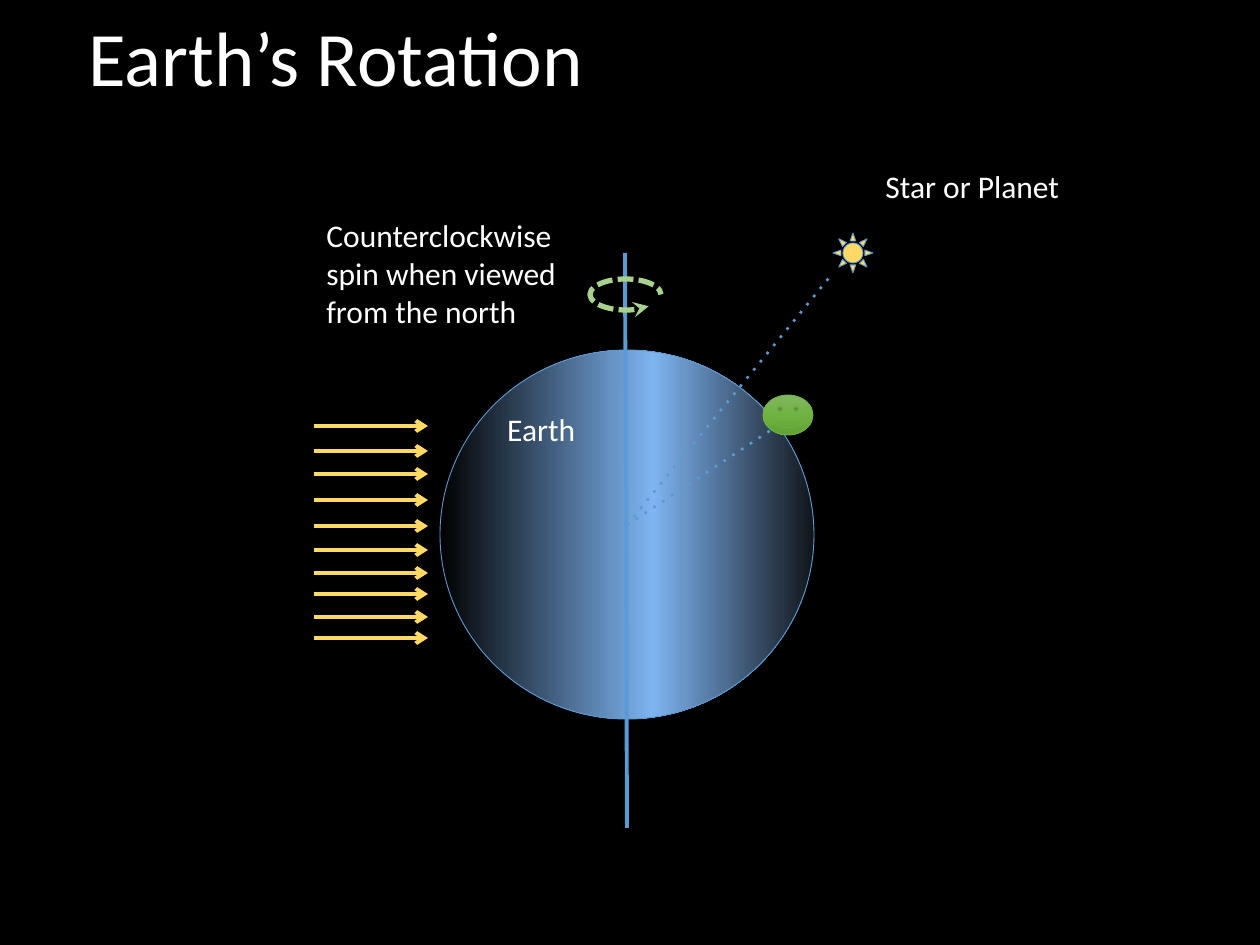
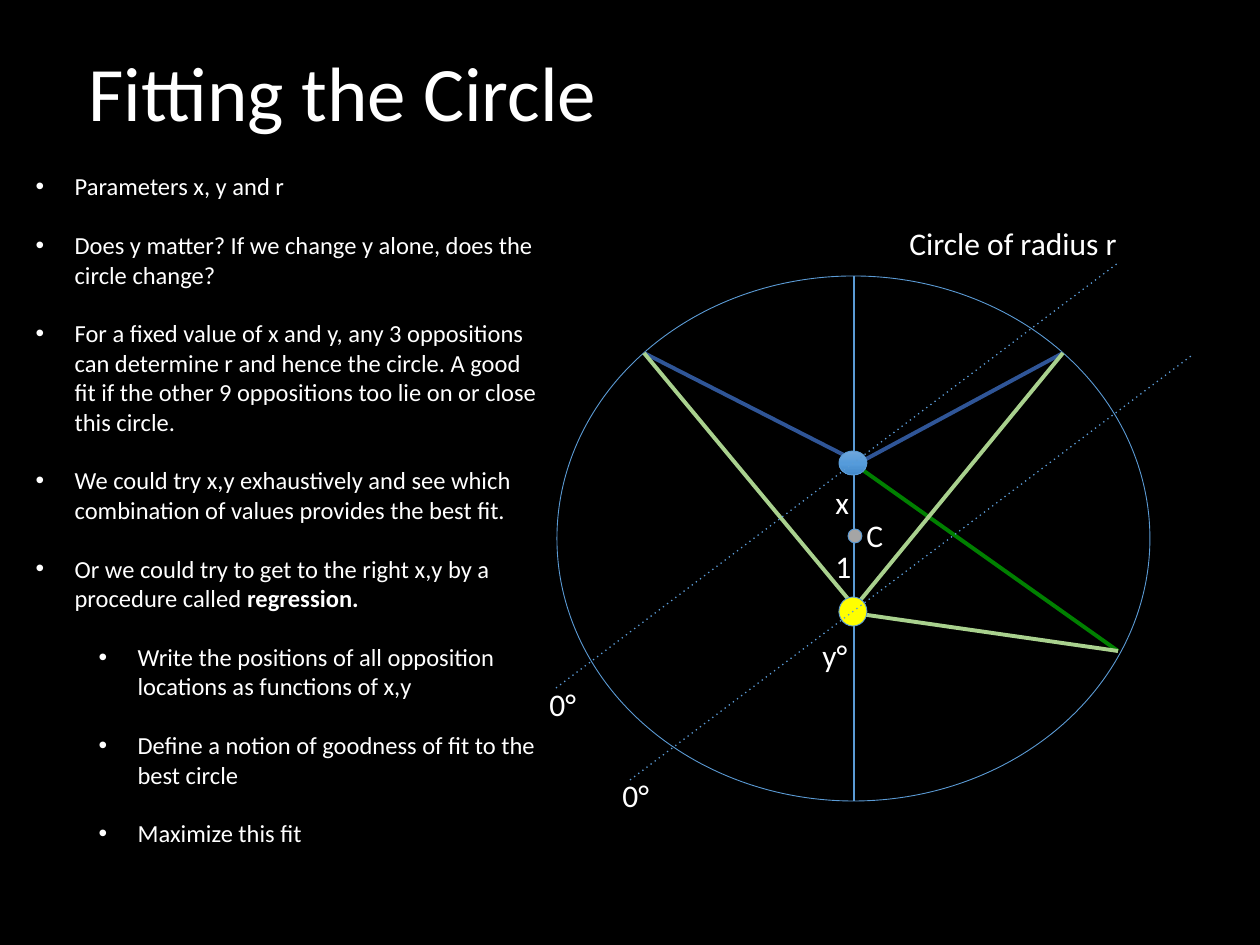
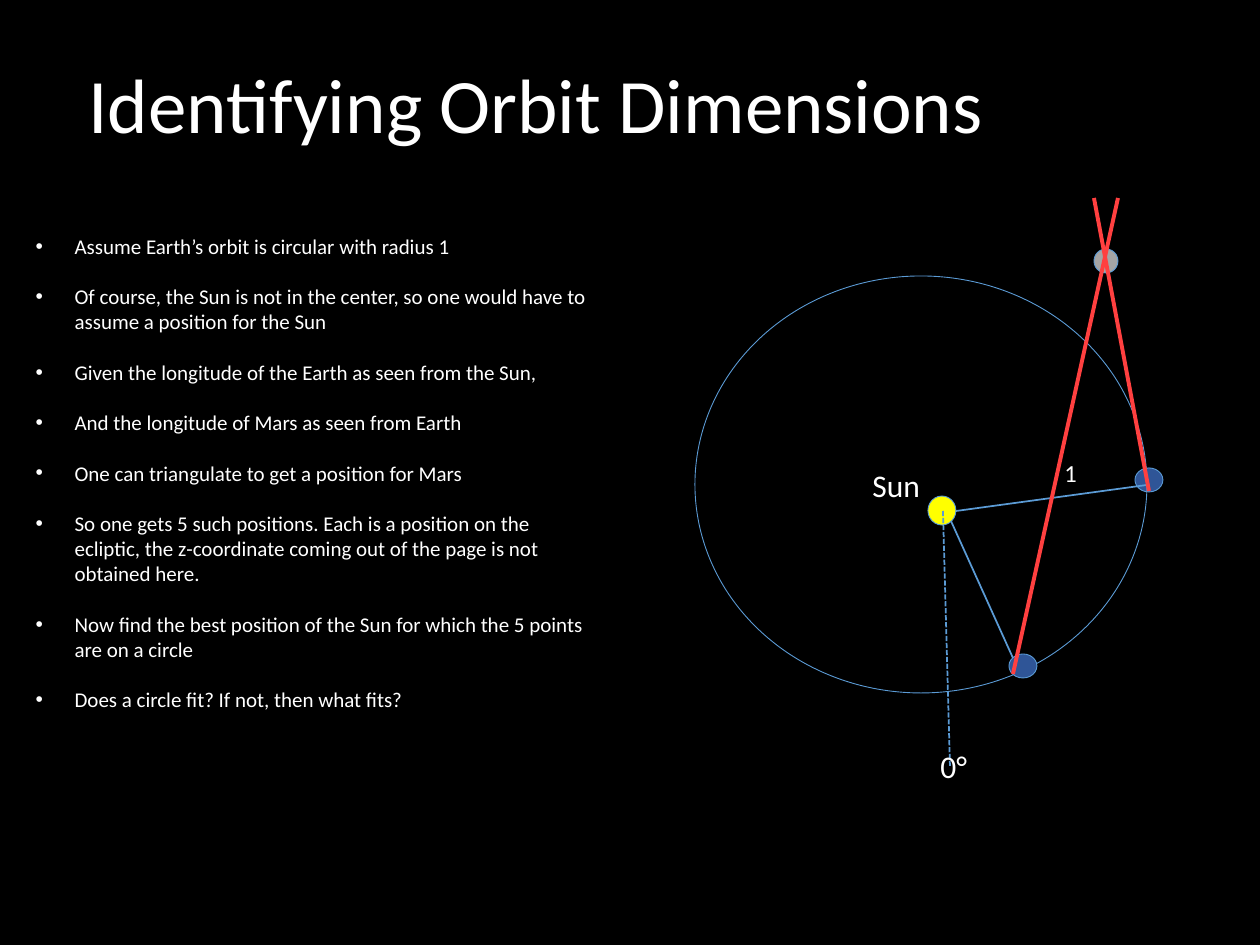
from dataclasses import dataclass
from typing import Optional, Union

import lxml.etree
import pptx
import pptx.dml.color
import pptx.enum.shapes
import pptx.enum.text
import pptx.oxml.ns
import pptx.util

RGB = pptx.dml.color.RGBColor
PRESET = pptx.enum.shapes.MSO_SHAPE
FIT = pptx.enum.text.MSO_AUTO_SIZE
ANCHOR = pptx.enum.text.MSO_ANCHOR
LEFT = pptx.enum.text.PP_ALIGN.LEFT
qn = pptx.oxml.ns.qn

# Shared look
FONT = "Calibri"
PX_PER_INCH = 126
BLACK = RGB(0x00, 0x00, 0x00)
WHITE = RGB(0xFF, 0xFF, 0xFF)
BLUE = RGB(0x5B, 0x9B, 0xD5)
NAVY = RGB(0x2F, 0x55, 0x97)
GOLD = RGB(0xFF, 0xD9, 0x66)
YELLOW = RGB(0xFF, 0xFF, 0x00)
LIGHT_GREEN = RGB(0xA9, 0xD1, 0x8E)
LEAF_GREEN = RGB(0x70, 0xAD, 0x47)
DARK_GREEN = RGB(0x00, 0x80, 0x00)
GREY = RGB(0xA5, 0xA5, 0xA5)
RED = RGB(0xFF, 0x40, 0x40)

Box = tuple[int, int, int, int]
Point = tuple[int, int]


@dataclass(frozen=True)
class Gradient:
    stops: tuple[tuple[int, RGB], ...]
    angle: int = 270


@dataclass(frozen=True)
class Body:
    box: Box
    fill: Union[RGB, Gradient, None] = None
    preset: PRESET = PRESET.OVAL
    outline: RGB = BLUE
    text: str = ""


@dataclass(frozen=True)
class Line:
    start: Point
    end: Point
    color: RGB = BLUE
    width: float = 1
    dash: Optional[str] = None
    tail: Optional[str] = None


@dataclass(frozen=True)
class Label:
    text: str
    box: Box
    wrap: bool = False
    size: int = 18


@dataclass(frozen=True)
class Bullet:
    text: str
    level: int = 0
    bold_end: str = ""


Part = Union[Body, Line, Label]

EARTH_SHADE = Gradient(((0, BLACK), (57, RGB(0x7E, 0xB4, 0xF1)), (100, RGB(0x11, 0x15, 0x1A))), 0)
GREEN_SHADE = Gradient(((0, RGB(0x81, 0xB8, 0x61)), (50, RGB(0x6F, 0xB2, 0x42)),
                        (100, RGB(0x62, 0xA3, 0x36))))
BLUE_SHADE = Gradient(((0, RGB(0x71, 0xA6, 0xDB)), (50, RGB(0x55, 0x9B, 0xDB)),
                       (100, RGB(0x44, 0x8A, 0xCA))))


# Drawing helpers
def px(length: int) -> pptx.util.Emu:
    return pptx.util.Emu(round(length * 914400 / PX_PER_INCH))


def place(shape, box: Box) -> None:
    shape.left, shape.top, shape.width, shape.height = map(px, box)


def style(paragraph, size: int) -> None:
    paragraph.alignment = LEFT
    paragraph.font.name = FONT
    paragraph.font.size = pptx.util.Pt(size)
    paragraph.font.color.rgb = WHITE


def stroke(shape, color: RGB, width: float, dash: Optional[str] = None,
           head: Optional[str] = None, tail: Optional[str] = None) -> None:
    shape.line.color.rgb = color
    shape.line.width = pptx.util.Pt(width)
    outline = shape._element.spPr.find(qn("a:ln"))
    for tag, attribute, value in (("a:prstDash", "val", dash), ("a:headEnd", "type", head),
                                  ("a:tailEnd", "type", tail)):
        if value:
            lxml.etree.SubElement(outline, qn(tag)).set(attribute, value)


def paint(shape, fill: Union[RGB, Gradient, None]) -> None:
    if fill is None:
        shape.fill.background()
    elif isinstance(fill, Gradient):
        shape.fill.gradient()
        shape.fill.gradient_angle = fill.angle
        stops = next(shape._element.spPr.iter(qn("a:gsLst")))
        for old in list(stops):
            stops.remove(old)
        for percent, color in fill.stops:
            stop = lxml.etree.SubElement(stops, qn("a:gs"))
            stop.set("pos", str(percent * 1000))
            lxml.etree.SubElement(stop, qn("a:srgbClr")).set("val", str(color))
    else:
        shape.fill.solid()
        shape.fill.fore_color.rgb = fill


def draw_body(slide, body: Body) -> None:
    shape = slide.shapes.add_shape(body.preset, *map(px, body.box))
    shape.shadow.inherit = False
    paint(shape, body.fill)
    stroke(shape, body.outline, 0.5)
    if body.text:
        shape.text_frame.text = body.text
        shape.text_frame.vertical_anchor = ANCHOR.TOP
        style(shape.text_frame.paragraphs[0], 18)


def draw_line(slide, line: Line) -> None:
    connector = slide.shapes.add_connector(pptx.enum.shapes.MSO_CONNECTOR.STRAIGHT,
                                           *map(px, line.start + line.end))
    stroke(connector, line.color, line.width, line.dash, tail=line.tail)
    lxml.etree.SubElement(connector._element.spPr, qn("a:effectLst"))


def draw_label(slide, label: Label) -> None:
    frame = slide.shapes.add_textbox(*map(px, label.box)).text_frame
    frame.word_wrap = label.wrap
    frame.auto_size = FIT.SHAPE_TO_FIT_TEXT
    frame.text = label.text
    style(frame.paragraphs[0], label.size)


def draw(slide, parts: list[Part]) -> None:
    painters = {Body: draw_body, Line: draw_line, Label: draw_label}
    for part in parts:
        painters[type(part)](slide, part)


def draw_spin(slide, box: Box) -> None:
    spin = slide.shapes.add_shape(PRESET.ARC, *map(px, box))
    spin.shadow.inherit = False
    spin.adjustments[0] = 26.86 * 0.6  # degrees to adjustment units
    spin.adjustments[1] = 0
    spin.fill.background()
    stroke(spin, LIGHT_GREEN, 3, "sysDash", head="stealth")


def add_slide(deck, layout: str, title: str, top: int, height: int):
    slide = deck.slides.add_slide(deck.slide_layouts.get_by_name(layout))
    heading = slide.shapes.title
    place(heading, (76, top, 1109, height))
    frame = heading.text_frame
    frame.text = title
    frame.auto_size = FIT.NONE
    frame.vertical_anchor = ANCHOR.MIDDLE
    style(frame.paragraphs[0], 44)
    frame.paragraphs[0].line_spacing = 0.9
    return slide


def fill_list(slide, box: Box, size: int, bullets: list[Bullet]) -> None:
    body = slide.placeholders[1]
    place(body, box)
    frame = body.text_frame
    frame.auto_size = FIT.NONE
    frame.vertical_anchor = ANCHOR.TOP
    for index, bullet in enumerate(bullets):
        paragraph = frame.paragraphs[0] if index == 0 else frame.add_paragraph()
        paragraph.level = bullet.level
        paragraph.add_run().text = bullet.text
        if bullet.bold_end:
            ending = paragraph.add_run()
            ending.text = bullet.bold_end
            ending.font.bold = True
        style(paragraph, size)
        paragraph.space_before = pptx.util.Pt(0)
        paragraph.space_after = pptx.util.Pt(1.2 * size)
        properties = paragraph._p.get_or_add_pPr()
        properties.set("marL", str(px(39 + 63 * bullet.level)))
        properties.set("indent", str(-px(39)))
        lxml.etree.SubElement(properties, qn("a:buFont")).set("typeface", "Arial")
        lxml.etree.SubElement(properties, qn("a:buChar")).set("char", "•")
        # Default run properties come after the bullet in the schema
        defaults = properties.find(qn("a:defRPr"))
        if defaults is not None:
            properties.append(defaults)


# Slides
def rotation_slide(deck) -> None:
    slide = add_slide(deck, "Title Only", "Earth’s Rotation", -30, 184)
    earth_center = (627, 525)
    draw(slide, [
        Body((440, 350, 374, 369), EARTH_SHADE, text="Earth"),
        Line((625, 253), (627, 828), width=2.25),
    ])
    draw_spin(slide, (590, 279, 71, 31))
    sunlight = [Line((314, y), (428, y), GOLD, 2.25, tail="arrow")
                for y in (426, 451, 474, 500, 526, 550, 573, 594, 617, 638)]
    draw(slide, [
        Body((763, 395, 50, 40), GREEN_SHADE, PRESET.SMILEY_FACE, LEAF_GREEN),
        *sunlight,
        Body((833, 233, 40, 40), GOLD, PRESET.SUN),
        Label("Star or Planet", (873, 161, 272, 50), wrap=True),
        Line(earth_center, (833, 273), width=1.5, dash="dot"),
        Line(earth_center, (771, 430), width=1.5, dash="dot"),
        Label("Counterclockwise spin when viewed from the north", (314, 210, 307, 127), wrap=True),
    ])


def circle_slide(deck) -> None:
    slide = add_slide(deck, "Title and Content", "Fitting the Circle", 20, 154)
    fill_list(slide, (23, 165, 534, 745), 14, [
        Bullet("Parameters x, y and r"),
        Bullet("Does y matter? If we change y alone, does the circle change?"),
        Bullet("For a fixed value of x and y, any 3 oppositions can determine r and hence the "
               "circle. A good fit if the other 9 oppositions too lie on or close this circle."),
        Bullet("We could try x,y exhaustively and see which combination of values provides "
               "the best fit."),
        Bullet("Or we could try to get to the right x,y by a procedure called ",
               bold_end="regression."),
        Bullet("Write the positions of all opposition locations as functions of x,y", 1),
        Bullet("Define a notion of goodness of fit to the best circle", 1),
        Bullet("Maximize this fit", 1),
    ])
    upper_left, upper_right, lower_right = (644, 353), (1063, 353), (1118, 651)
    draw(slide, [
        Body((557, 276, 593, 525)),
        Line((854, 276), (854, 801)),
        Body((848, 529, 14, 14), GREY),
        Line((844, 455), upper_left, NAVY, 2.25),
        Line((844, 471), upper_right, NAVY, 2.25),
        Line((864, 471), lower_right, DARK_GREEN, 2.25),
        Body((839, 451, 28, 24), BLUE_SHADE),
        Line((839, 611), lower_right, LIGHT_GREEN, 2.25),
        Line(upper_right, (854, 608), LIGHT_GREEN, 2.25),
        Line(upper_left, (854, 606), LIGHT_GREEN, 2.25),
        Label("C", (854, 510, 194, 50), wrap=True),
        Body((839, 597, 28, 29), YELLOW),
        Line((556, 688), (1118, 263), width=0.75, dash="dot"),
        Line((630, 780), (1191, 356), width=0.75, dash="dot"),
        Label("1", (823, 541, 45, 50)),
        Label("x", (823, 477, 42, 50)),
        Label("0°", (610, 770, 58, 50)),
        Label("0°", (537, 679, 58, 50)),
        Label("y°", (810, 630, 54, 50)),
        Label("Circle of radius r", (897, 218, 282, 50)),
    ])


def orbit_slide(deck) -> None:
    slide = add_slide(deck, "Title and Content", "Identifying Orbit Dimensions", 20, 178)
    fill_list(slide, (23, 227, 588, 690), 12, [Bullet(text) for text in (
        "Assume Earth’s orbit is circular with radius 1",
        "Of course, the Sun is not in the center, so one would have to assume a position "
        "for the Sun",
        "Given the longitude of the Earth as seen from the Sun,",
        "And the longitude of Mars as seen from Earth",
        "One can triangulate to get a position for Mars",
        "So one gets 5 such positions. Each is a position on the ecliptic, the z-coordinate "
        "coming out of the page is not obtained here.",
        "Now find the best position of the Sun for which the 5 points are on a circle",
        "Does a circle fit? If not, then what fits?",
    )])
    draw(slide, [
        Body((1094, 249, 24, 24), GREY),
        Body((1135, 468, 28, 24), NAVY),
        Body((928, 496, 28, 29), YELLOW),
        Body((695, 276, 452, 417)),
        Body((1009, 654, 28, 24), NAVY),
        Line((956, 511), (1147, 485)),
        Line((951, 521), (1013, 658)),
        Line((1013, 674), (1118, 198), RED, 2.25),
        Line((1149, 491), (1094, 198), RED, 2.25),
        Label("Sun", (860, 460, 234, 50), wrap=True),
        Label("1", (1052, 452, 40, 43), size=14),
        Line((943, 511), (950, 766), dash="sysDash"),
        Label("0°", (928, 741, 58, 50)),
    ])


def main() -> None:
    deck = pptx.Presentation()
    deck.slide_width, deck.slide_height = px(1260), px(945)
    background = deck.slide_master.background.fill
    background.solid()
    background.fore_color.rgb = BLACK
    rotation_slide(deck)
    circle_slide(deck)
    orbit_slide(deck)
    deck.save("out.pptx")


if __name__ == "__main__":
    main()
